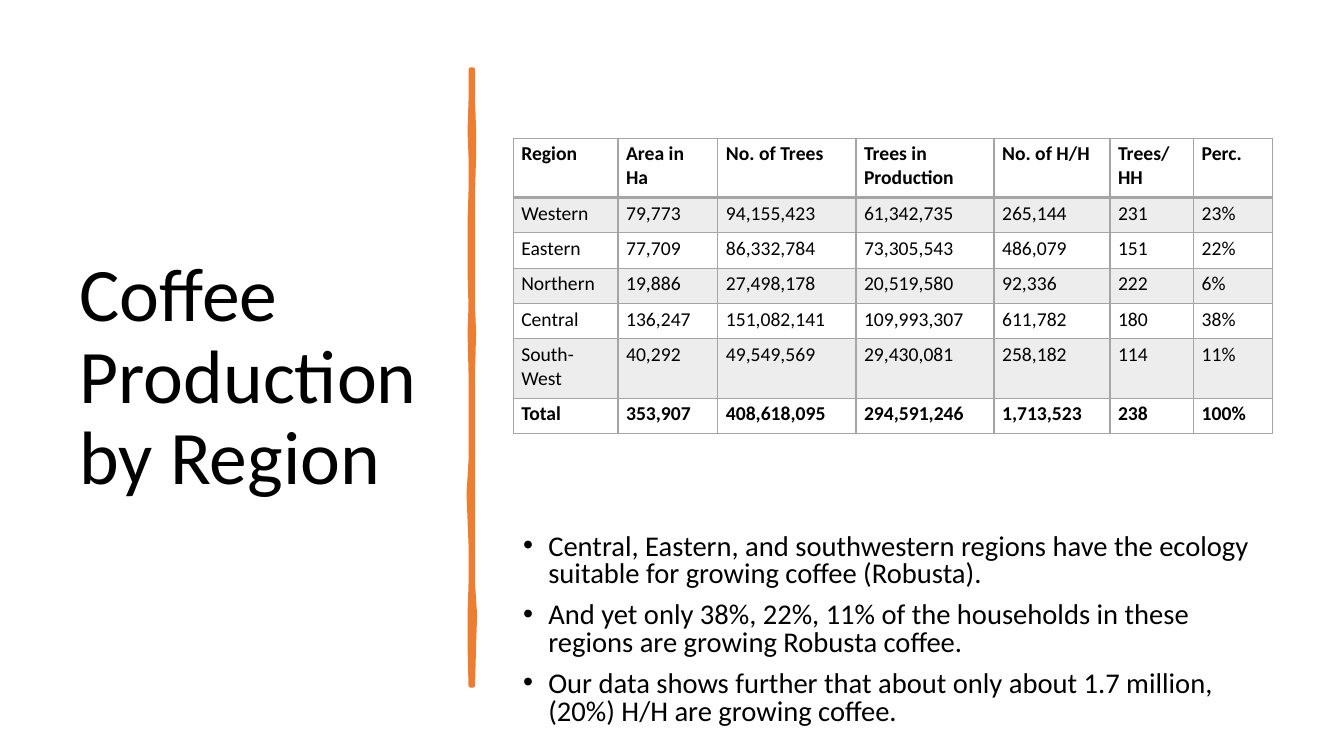
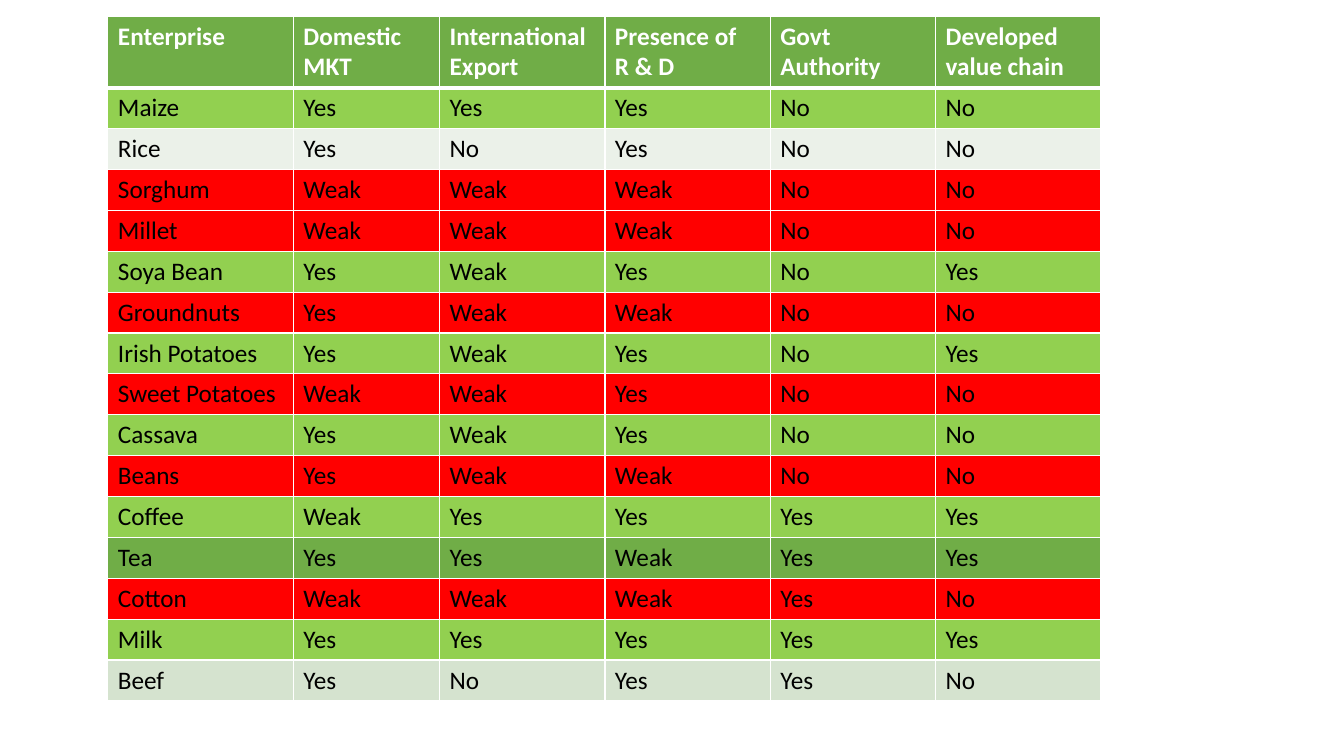
from lxml import etree
from pptx import Presentation
from pptx.dml.color import RGBColor
from pptx.enum.text import MSO_ANCHOR, MSO_AUTO_SIZE, PP_ALIGN
from pptx.oxml.ns import qn
from pptx.util import Inches, Pt

LEFT, TOP, MIDDLE = PP_ALIGN.LEFT, MSO_ANCHOR.TOP, MSO_ANCHOR.MIDDLE
NO_FIT = MSO_AUTO_SIZE.NONE
FONT = "Calibri"
BLACK = RGBColor(0x00, 0x00, 0x00)
WHITE = RGBColor(0xFF, 0xFF, 0xFF)
GRAY = RGBColor(0xA5, 0xA5, 0xA5)
BAND = RGBColor(0xED, 0xED, 0xED)
ORANGE = RGBColor(0xED, 0x7D, 0x31)
GREEN = RGBColor(0x70, 0xAD, 0x47)
LIME = RGBColor(0x92, 0xD0, 0x50)
RED = RGBColor(0xFF, 0x00, 0x00)
PALE = RGBColor(0xEB, 0xF1, 0xE9)
SAGE = RGBColor(0xD5, 0xE3, 0xCF)

TITLE = "Coffee Production by Region"
FINDINGS = [
    "Central, Eastern, and southwestern regions have the ecology suitable for growing coffee (Robusta).",
    "And yet only 38%, 22%, 11% of the households in these regions are growing Robusta coffee.",
    "Our data shows further that about only about 1.7 million, (20%) H/H are growing coffee.",
]
REGIONS = [
    ("Region", "Area in Ha", "No. of Trees", "Trees in Production", "No. of H/H", "Trees/\nHH", "Perc."),
    ("Western", "79,773", "94,155,423", "61,342,735", "265,144", "231", "23%"),
    ("Eastern", "77,709", "86,332,784", "73,305,543", "486,079", "151", "22%"),
    ("Northern", "19,886", "27,498,178", "20,519,580", "92,336", "222", "6%"),
    ("Central", "136,247", "151,082,141", "109,993,307", "611,782", "180", "38%"),
    ("South-West", "40,292", "49,549,569", "29,430,081", "258,182", "114", "11%"),
    ("Total", "353,907", "408,618,095", "294,591,246", "1,713,523", "238", "100%"),
]
ENTERPRISES = [
    ("Enterprise", "Domestic MKT", "International Export", "Presence of\nR & D",
     "Govt Authority", "Developed value chain"),
    ("Maize", "Yes", "Yes", "Yes", "No", "No"),
    ("Rice", "Yes", "No", "Yes", "No", "No"),
    ("Sorghum", "Weak", "Weak", "Weak", "No", "No"),
    ("Millet", "Weak", "Weak", "Weak", "No", "No"),
    ("Soya Bean", "Yes", "Weak", "Yes", "No", "Yes"),
    ("Groundnuts", "Yes", "Weak", "Weak", "No", "No"),
    ("Irish Potatoes", "Yes", "Weak", "Yes", "No", "Yes"),
    ("Sweet Potatoes", "Weak", "Weak", "Yes", "No", "No"),
    ("Cassava", "Yes", "Weak", "Yes", "No", "No"),
    ("Beans", "Yes", "Weak", "Weak", "No", "No"),
    ("Coffee", "Weak", "Yes", "Yes", "Yes", "Yes"),
    ("Tea", "Yes", "Yes", "Weak", "Yes", "Yes"),
    ("Cotton", "Weak", "Weak", "Weak", "Yes", "No"),
    ("Milk", "Yes", "Yes", "Yes", "Yes", "Yes"),
    ("Beef", "Yes", "No", "Yes", "Yes", "No"),
]
ENTERPRISE_FILLS = [GREEN, LIME, PALE, RED, RED, LIME, RED, LIME, RED,
                    LIME, RED, LIME, GREEN, RED, LIME, SAGE]
REGION_STYLE = dict(
    at=(5.09, 1.37), columns=[1.04, 0.99, 1.37, 1.37, 1.15, 0.83, 0.78],
    heights=[0.59, 0.35, 0.35, 0.35, 0.35, 0.59, 0.35],
    fills=[None, BAND, None, BAND, None, BAND, None],
    size=14, head=BLACK, bold_rows={0, 6}, border=GRAY, rule=2, inset=(0.08, 0.04))
ENTERPRISE_STYLE = dict(
    at=(1.07, 0.16), columns=[1.84, 1.45] + [1.64] * 4,
    heights=[0.71] + [0.4] * 15, fills=ENTERPRISE_FILLS,
    size=18, head=WHITE, bold_rows={0}, border=WHITE, rule=3, inset=(0.1, 0.05))

BRUSH_EDGES = [
    (0.69, 4.67, 4.69), (1.0, 4.67, 4.69), (1.3, 4.66, 4.7), (1.55, 4.67, 4.7),
    (1.9, 4.67, 4.69), (2.2, 4.66, 4.69), (2.7, 4.66, 4.69), (3.04, 4.67, 4.69),
    (3.3, 4.66, 4.7), (3.69, 4.67, 4.69), (4.2, 4.67, 4.69), (4.57, 4.67, 4.69),
    (4.9, 4.65, 4.69), (5.4, 4.67, 4.69), (5.8, 4.67, 4.69), (6.1, 4.66, 4.71),
    (6.4, 4.66, 4.7), (6.8, 4.67, 4.69),
]


def assign(target, values):
    for name, value in values.items():
        setattr(target, name, value)


def style_font(font, size, color=BLACK, bold=False):
    assign(font, dict(name=FONT, size=Pt(size), bold=bold))
    font.color.rgb = color


def fill_cell(cell, color):
    if color is None:
        cell.fill.background()
    else:
        cell.fill.solid()
        cell.fill.fore_color.rgb = color


def border_cell(cell, color, top, bottom):
    properties = cell._tc.get_or_add_tcPr()
    sides = [("lnL", 1), ("lnR", 1), ("lnT", top), ("lnB", bottom)]
    for place, (side, width) in enumerate(sides):
        line = etree.Element(qn(f"a:{side}"), w=str(Pt(width)))
        paint = etree.SubElement(line, qn("a:solidFill"))
        etree.SubElement(paint, qn("a:srgbClr"), val=str(color))
        properties.insert(place, line)


def add_grid(slide, rows, style):
    columns, heights = style["columns"], style["heights"]
    box = (*style["at"], sum(columns), sum(heights))
    table = slide.shapes.add_table(len(rows), len(columns), *map(Inches, box)).table
    table.horz_banding = False
    for column, width in zip(table.columns, columns):
        column.width = Inches(width)
    side, edge = map(Inches, style["inset"])
    margins = dict(margin_left=side, margin_right=side, margin_top=edge, margin_bottom=edge)
    for r, values in enumerate(rows):
        table.rows[r].height = Inches(heights[r])
        for c, value in enumerate(values):
            cell = table.cell(r, c)
            assign(cell, dict(text=value, vertical_anchor=TOP, **margins))
            fill_cell(cell, style["fills"][r])
            border_cell(cell, style["border"],
                        top=style["rule"] if r == 1 else 1,
                        bottom=style["rule"] if r == 0 else 1)
            color = style["head"] if r == 0 else BLACK
            for paragraph in cell.text_frame.paragraphs:
                style_font(paragraph.runs[0].font, style["size"], color, r in style["bold_rows"])


def add_title(slide):
    title = slide.shapes.title
    assign(title, dict(left=Inches(0.69), top=Inches(0.7), width=Inches(3.74), height=Inches(6.11)))
    frame = title.text_frame
    assign(frame, dict(text=TITLE, word_wrap=True, auto_size=NO_FIT, vertical_anchor=MIDDLE))
    assign(frame.paragraphs[0], dict(alignment=LEFT, line_spacing=0.9))
    style_font(frame.paragraphs[0].runs[0].font, 54)


def add_brush_line(slide):
    left_edge = [(x, y) for y, x, _ in BRUSH_EDGES]
    right_edge = [(x, y) for y, _, x in reversed(BRUSH_EDGES)]
    outline = [(Inches(x), Inches(y)) for x, y in left_edge + right_edge]
    builder = slide.shapes.build_freeform(*outline[0])
    builder.add_line_segments(outline[1:], close=True)
    brush = builder.convert_to_shape()
    brush.shadow.inherit = False
    brush.fill.solid()
    brush.fill.fore_color.rgb = ORANGE
    brush.line.color.rgb = ORANGE
    brush.line.width = Pt(3.25)


def add_findings(slide):
    box = slide.shapes.add_textbox(*map(Inches, (5.09, 5.25, 7.54, 2.01)))
    frame = box.text_frame
    assign(frame, dict(text="\n".join(FINDINGS), word_wrap=True, auto_size=NO_FIT, vertical_anchor=TOP))
    for paragraph in frame.paragraphs:
        assign(paragraph, dict(line_spacing=0.8, space_before=Pt(10)))
        style_font(paragraph.runs[0].font, 20.4)
        properties = paragraph._p.get_or_add_pPr()
        properties.set("marL", str(Inches(0.25)))
        properties.set("indent", str(Inches(-0.25)))
        etree.SubElement(properties, qn("a:buFont"), typeface="Arial")
        etree.SubElement(properties, qn("a:buChar"), char="•")


def main():
    deck = Presentation()
    assign(deck, dict(slide_width=Inches(13.33), slide_height=Inches(7.5)))
    title_only, blank = deck.slide_layouts[5], deck.slide_layouts[6]

    production = deck.slides.add_slide(title_only)
    add_title(production)
    add_brush_line(production)
    add_findings(production)
    add_grid(production, REGIONS, REGION_STYLE)

    add_grid(deck.slides.add_slide(blank), ENTERPRISES, ENTERPRISE_STYLE)
    deck.save("out.pptx")


if __name__ == "__main__":
    main()
